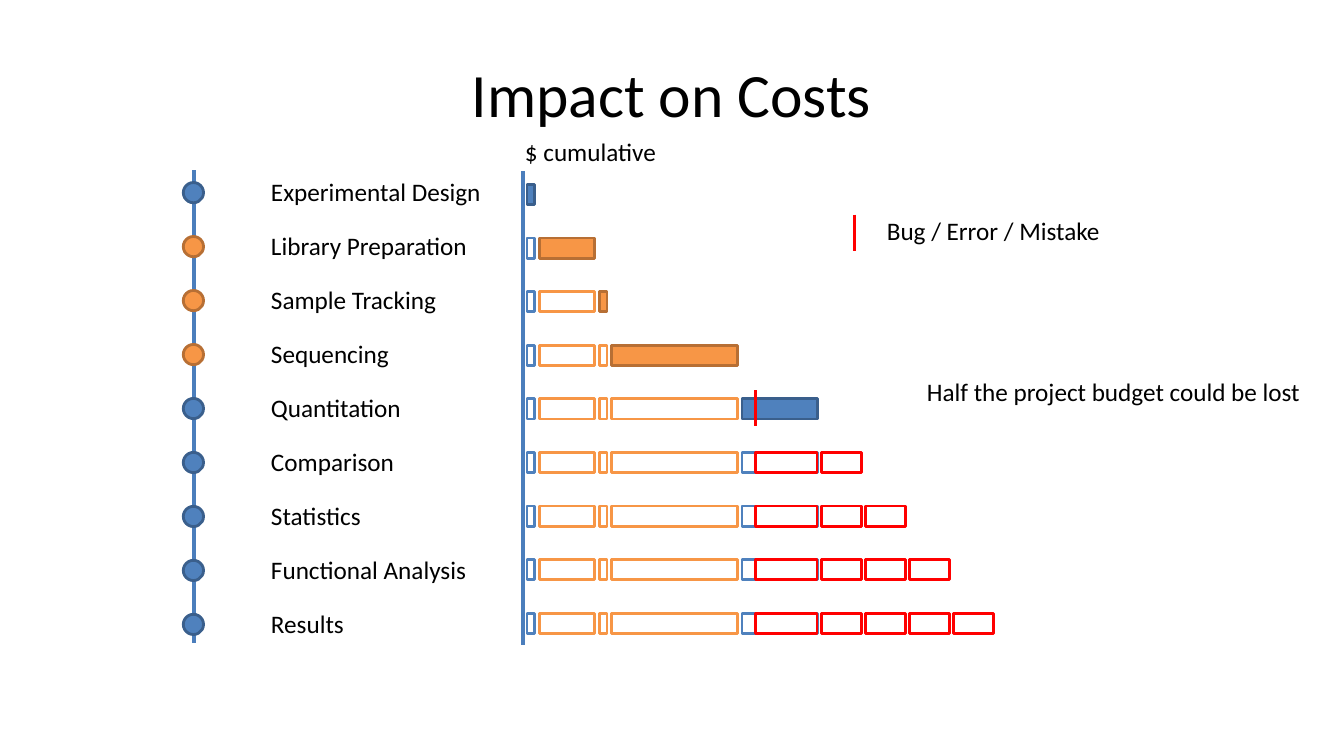
import pptx
import pptx.dml.color
import pptx.enum.shapes
import pptx.enum.text
import pptx.util
from lxml import etree
from pptx.dml.color import RGBColor
from pptx.util import Cm

BLACK = RGBColor(0x00, 0x00, 0x00)
WHITE = RGBColor(0xFF, 0xFF, 0xFF)
RED = RGBColor(0xFF, 0x00, 0x00)
BLUE = RGBColor(0x4F, 0x81, 0xBD)
DARK_BLUE = RGBColor(0x3A, 0x5F, 0x8C)
AXIS_BLUE = RGBColor(0x4B, 0x7E, 0xBC)
ORANGE = RGBColor(0xF7, 0x96, 0x46)
DARK_ORANGE = RGBColor(0xB7, 0x6F, 0x34)
EDGES = {BLUE: DARK_BLUE, ORANGE: DARK_ORANGE}

RECTANGLE = pptx.enum.shapes.MSO_SHAPE.RECTANGLE
OVAL = pptx.enum.shapes.MSO_SHAPE.OVAL

STAGES = [
    ("Experimental Design", 5.99, BLUE, 0.2),
    ("Library Preparation", 5.51, ORANGE, 1.4),
    ("Sample Tracking", 4.72, ORANGE, 0.2),
    ("Sequencing", 3.53, ORANGE, 3.18),
    ("Quantitation", 3.84, BLUE, 1.9),
    ("Comparison", 3.66, BLUE, 1),
    ("Statistics", 2.79, BLUE, 1),
    ("Functional Analysis", 5.49, BLUE, 1),
    ("Results", 2.36, BLUE, 1),
]
BUG_STAGE = 4
BUG_LEFT = 19.04
LOST_WIDTH = 1.55
COST_LEFT, COST_TOP, COST_PITCH, COST_GAP = 13.28, 4.65, 1.35, 0.11
LABEL_TOP, DOT_TOP, STAGE_PITCH = 4.32, 4.6, 1.36
MARK_SIZE = 0.51


class CostSlide:
    """Hold the text style and the slide, and draw its elements in centimetres."""

    def __init__(self, slide, font="Calibri", size=18):
        self.slide = slide
        self.font = font
        self.size = size

    def text(self, words, left, top, width, height=1.02, size=None, centred=False):
        box = self.slide.shapes.add_textbox(Cm(left), Cm(top), Cm(width), Cm(height))
        frame = box.text_frame
        frame.word_wrap = centred
        paragraph = frame.paragraphs[0]
        if centred:
            frame.vertical_anchor = pptx.enum.text.MSO_ANCHOR.MIDDLE
            paragraph.alignment = pptx.enum.text.PP_ALIGN.CENTER
        else:
            frame.auto_size = pptx.enum.text.MSO_AUTO_SIZE.SHAPE_TO_FIT_TEXT
        run = paragraph.add_run()
        run.text = words
        run.font.name = self.font
        run.font.size = pptx.util.Pt(size or self.size)
        run.font.color.rgb = BLACK

    def mark(self, kind, left, top, width, fill, edge):
        shape = self.slide.shapes.add_shape(
            kind, Cm(left), Cm(top), Cm(width), Cm(MARK_SIZE))
        shape.shadow.inherit = False
        shape.fill.solid()
        shape.fill.fore_color.rgb = fill
        shape.line.color.rgb = edge
        shape.line.width = pptx.util.Pt(2)

    def vertical(self, x, top, bottom, colour, weight):
        line = self.slide.shapes.add_connector(
            pptx.enum.shapes.MSO_CONNECTOR.STRAIGHT, Cm(x), Cm(top), Cm(x), Cm(bottom))
        line.line.color.rgb = colour
        line.line.width = pptx.util.Pt(weight)
        etree.SubElement(line.element.spPr, pptx.oxml.ns.qn("a:effectLst"))

    def costs(self, row):
        top = COST_TOP + row * COST_PITCH
        left = COST_LEFT
        for stage, (_, _, colour, width) in enumerate(STAGES[:row + 1]):
            if stage > BUG_STAGE:
                fill, edge = WHITE, RED
            elif stage == row:
                fill, edge = colour, EDGES[colour]
            else:
                fill, edge = WHITE, colour
            self.mark(RECTANGLE, left, top, width, fill, edge)
            left += width + COST_GAP
        if row > BUG_STAGE:
            self.mark(RECTANGLE, BUG_LEFT, top, LOST_WIDTH, WHITE, RED)


def main():
    deck = pptx.Presentation()
    deck.slide_width, deck.slide_height = Cm(33.87), Cm(19.05)
    page = CostSlide(deck.slides.add_slide(deck.slide_layouts[6]))

    page.text("Impact on Costs", 1.69, 0.76, 30.48, 3.18, size=44, centred=True)
    page.vertical(21.54, 5.41, 6.32, RED, 2.25)
    page.text("Bug / Error / Mistake", 22.1, 5.31, 5.94)

    page.text("$ cumulative", 12.98, 3.3, 3.86)
    page.vertical(13.18, 4.32, 16.26, AXIS_BLUE, 3)
    page.vertical(4.88, 4.29, 16.21, AXIS_BLUE, 3)
    for row, (stage, label_width, colour, _) in enumerate(STAGES):
        page.costs(row)
        page.text(stage, 6.58, LABEL_TOP + row * STAGE_PITCH, label_width)
        page.mark(OVAL, 4.62, DOT_TOP + row * STAGE_PITCH, MARK_SIZE, colour, EDGES[colour])
    page.vertical(19.05, 9.83, 10.74, RED, 2.25)

    page.text("Half the project budget could be lost", 23.11, 9.35, 10.03)
    deck.save("out.pptx")


if __name__ == "__main__":
    main()
